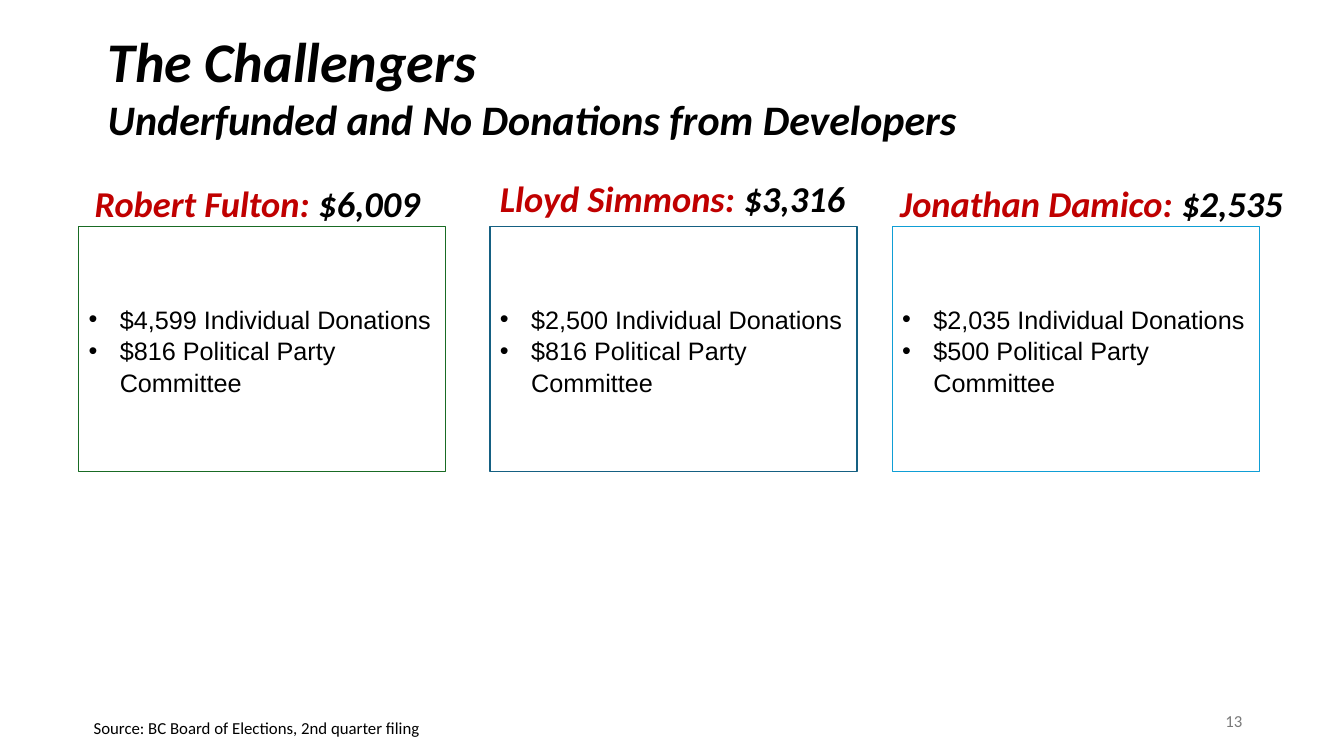
from pptx import Presentation
from pptx.dml.color import RGBColor
from pptx.enum import shapes, text
from pptx.oxml import parse_xml
from pptx.oxml.ns import nsdecls
from pptx.util import Inches, Pt

BLACK = "000000"
RED = "C00000"
CANDIDATES = [
    ("Robert Fulton: ", "$6,009", (0.84, 1.75, 3.52, 0.54), 0.78, "196B24", "$4,599", "$816"),
    ("Lloyd Simmons: ", "$3,316", (4.86, 1.7, 3.9, 0.54), 4.86, "156082", "$2,500", "$816"),
    ("Jonathan Damico: ", "$2,535", (8.83, 1.75, 4.08, 0.54), 8.85, "0F9ED5", "$2,035", "$500"),
]


def colour(value):
    return RGBColor.from_string(value)


def add_span(para, wording, size, fill=BLACK, font="Calibri", strong=False):
    span = para.add_run()
    span.text = wording
    span.font.name = font
    span.font.size = Pt(size)
    span.font.bold = span.font.italic = strong
    span.font.color.rgb = colour(fill)


def add_text(page, place, lines, anchor=text.MSO_ANCHOR.TOP,
             align=text.PP_ALIGN.LEFT, wrap=True):
    frame = page.shapes.add_textbox(*map(Inches, place)).text_frame
    frame.word_wrap = wrap
    frame.vertical_anchor = anchor
    for index, spans in enumerate(lines):
        para = frame.add_paragraph() if index else frame.paragraphs[0]
        para.alignment = align
        for span in spans:
            add_span(para, **span)
    return frame


def add_bullet(para):
    properties = para._p.get_or_add_pPr()
    properties.set("marL", str(Inches(0.31)))
    properties.set("indent", str(-Inches(0.31)))
    properties.append(parse_xml(f'<a:buFont {nsdecls("a")} typeface="Arial"/>'))
    properties.append(parse_xml(f'<a:buChar {nsdecls("a")} char="•"/>'))


def add_donations(page, left, outline, items):
    box = page.shapes.add_shape(
        shapes.MSO_SHAPE.RECTANGLE, *map(Inches, (left, 2.25, 3.64, 2.43)))
    box.shadow.inherit = False
    box.fill.background()
    box.line.color.rgb = colour(outline)
    box.line.width = Pt(1)
    frame = box.text_frame
    frame.word_wrap = True
    frame.vertical_anchor = text.MSO_ANCHOR.TOP
    frame.margin_top = Inches(0.75)
    for index, item in enumerate(items):
        para = frame.add_paragraph() if index else frame.paragraphs[0]
        add_bullet(para)
        para.alignment = text.PP_ALIGN.LEFT
        para.line_spacing = 1.05
        add_span(para, item, 18, font="Arial")


def main():
    deck = Presentation()
    deck.slide_width, deck.slide_height = Inches(13.33), Inches(7.5)
    page = deck.slides.add_slide(deck.slide_layouts[6])
    title = add_text(page, (0.97, 0.25, 11.67, 1.19), [
        [dict(wording="The Challengers", size=40, strong=True)],
        [dict(wording="Underfunded and No Donations from Developers", size=30, strong=True)],
    ], anchor=text.MSO_ANCHOR.MIDDLE)
    title.margin_top = title.margin_bottom = 0
    add_text(page, (9.42, 6.95, 3, 0.4), [[dict(wording="13", size=12, fill="797979")]],
             anchor=text.MSO_ANCHOR.MIDDLE, align=text.PP_ALIGN.RIGHT)
    for name, total, place, left, outline, individual, party in CANDIDATES:
        add_donations(page, left, outline, [
            f"{individual} Individual Donations",
            f"{party} Political Party Committee",
        ])
        add_text(page, place, [[
            dict(wording=name, size=26, fill=RED, strong=True),
            dict(wording=total, size=26, strong=True),
        ]])
    add_text(page, (0.83, 7.07, 3.47, 0.3), [
        [dict(wording="Source: BC Board of Elections, 2nd quarter filing", size=12)],
    ], wrap=False)
    deck.save("out.pptx")


if __name__ == "__main__":
    main()
